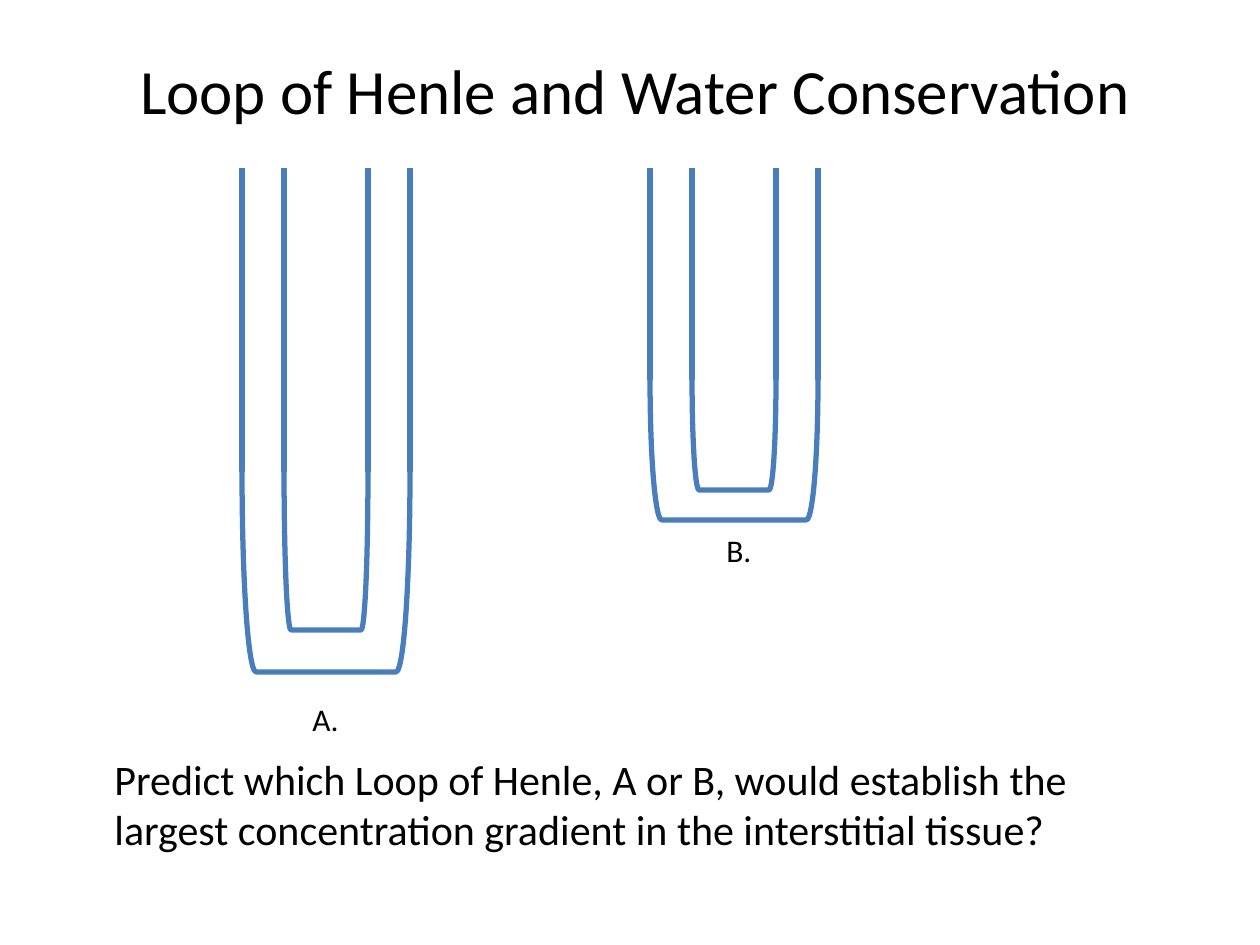
from lxml.etree import SubElement
from pptx import Presentation
from pptx.dml.color import RGBColor
from pptx.enum.shapes import MSO_CONNECTOR, MSO_SHAPE
from pptx.enum.text import MSO_ANCHOR, PP_ALIGN
from pptx.oxml.ns import qn
from pptx.util import Emu, Pt

EMU_PER_PX = 914400 / 126
TUBE_COLOUR = "4A7DBB"


def px(length):
    """Turn a length in px into EMU."""
    return Emu(round(length * EMU_PER_PX))


def colour(value):
    """Turn a hex string into a colour."""
    return RGBColor.from_string(value)


def style_line(shape):
    """Give a wall of the tube its line."""
    shape.line.color.rgb = colour(TUBE_COLOUR)
    shape.line.width = Pt(3)


def add_text(page, box, text, size, align=PP_ALIGN.LEFT, anchor=MSO_ANCHOR.TOP):
    """Place one paragraph of text in a box."""
    frame = page.shapes.add_textbox(*map(px, box)).text_frame
    frame.word_wrap = True
    frame.vertical_anchor = anchor
    para = frame.paragraphs[0]
    para.alignment = align
    span = para.add_run()
    span.text = text
    span.font.name = "Calibri"
    span.font.size = Pt(size)
    span.font.color.rgb = colour("000000")


def add_wall(group, box, straight):
    """Draw two straight limbs joined at the foot by a turned bracket."""
    left, top, width, height = box
    foot = top + straight
    depth = height - straight
    for x in (left, left + width):
        limb = group.shapes.add_connector(
            MSO_CONNECTOR.STRAIGHT, px(x), px(top), px(x), px(foot))
        style_line(limb)
        SubElement(limb._element.spPr, qn("a:effectLst"))
    bend = group.shapes.add_shape(
        MSO_SHAPE.RIGHT_BRACKET,
        px(left + (width - depth) / 2), px(foot + (depth - width) / 2),
        px(depth), px(width))
    bend.rotation = 90
    bend.shadow.inherit = False
    bend.fill.background()
    style_line(bend)


def add_loop(page, box, straight, inner_height):
    """Draw a loop as an inner wall inside an outer wall."""
    left, top, width, height = box
    inset = width / 4
    group = page.shapes.add_group_shape()
    add_wall(group, (left + inset, top, width / 2, inner_height), straight)
    add_wall(group, box, straight)


def main():
    """Build and save the slide."""
    deck = Presentation()
    deck.slide_width, deck.slide_height = px(1260), px(945)
    page = deck.slides.add_slide(deck.slide_layouts[6])
    add_text(page, (10, 10, 1250, 158), "Loop of Henle and Water Conservation",
             36, PP_ALIGN.CENTER, MSO_ANCHOR.MIDDLE)
    add_loop(page, (242, 168, 168, 504), 304, 462)
    add_loop(page, (650, 168, 168, 352), 212, 322)
    add_text(page, (300, 694, 52, 50), "A.", 18)
    add_text(page, (714, 525, 52, 50), "B.", 18)
    add_text(page, (102, 747, 1092, 158),
             "Predict which Loop of Henle, A or B, would establish the "
             "largest concentration gradient in the interstitial tissue?", 24)
    deck.save("out.pptx")


if __name__ == "__main__":
    main()
